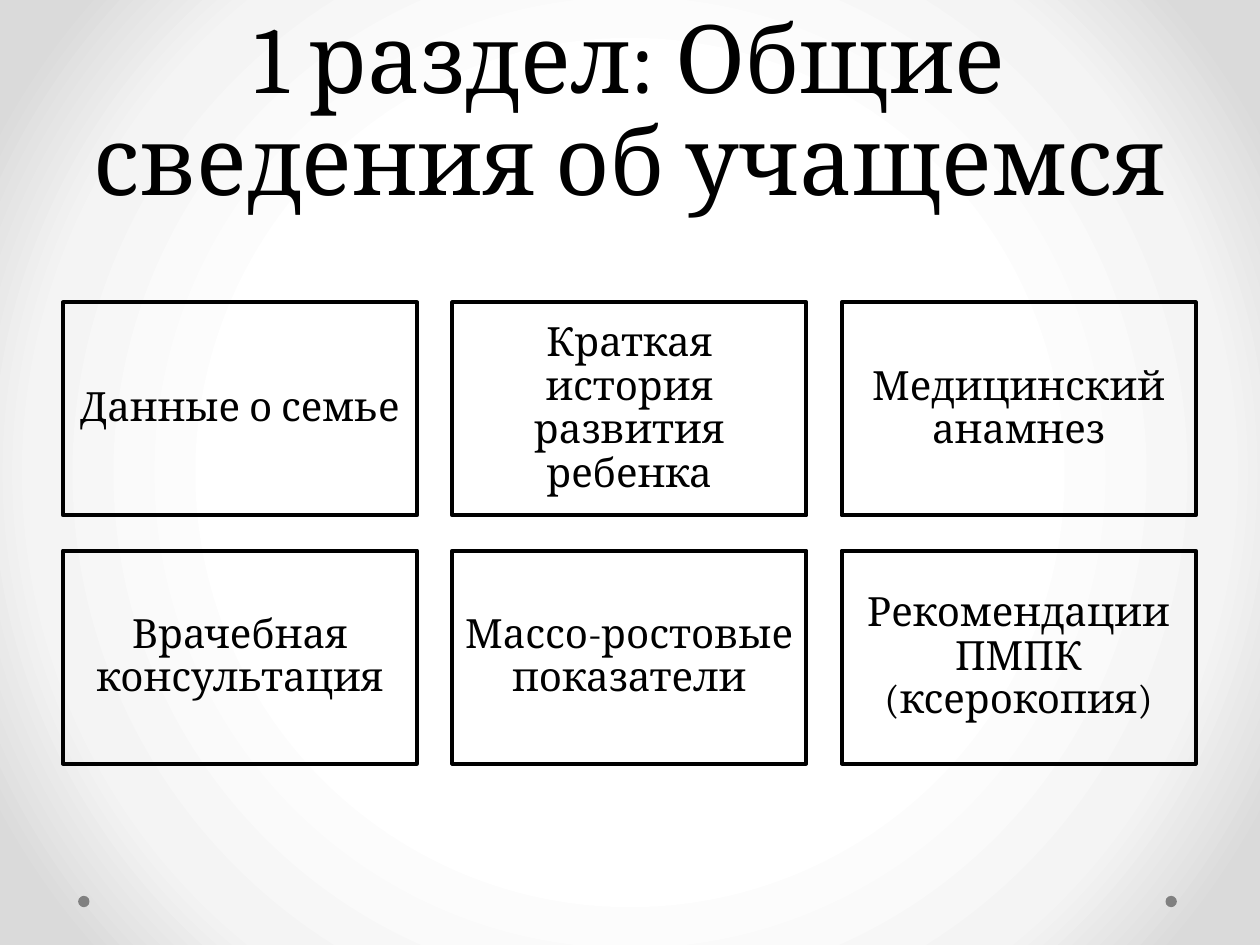
from pptx import Presentation
from pptx.dml.color import RGBColor
from pptx.enum.shapes import MSO_SHAPE
from pptx.enum.text import MSO_ANCHOR, PP_ALIGN
from pptx.oxml import parse_xml
from pptx.oxml.ns import nsdecls
from pptx.util import Inches, Pt

RECTANGLE = MSO_SHAPE.RECTANGLE
OVAL = MSO_SHAPE.OVAL
CENTER = PP_ALIGN.CENTER
MIDDLE = MSO_ANCHOR.MIDDLE
BOTTOM = MSO_ANCHOR.BOTTOM

BLACK = RGBColor(0x00, 0x00, 0x00)
GRAY = RGBColor(0x80, 0x80, 0x80)
FONT = "Cambria"

BACKGROUND_STOPS = [(50, "FFFFFF"), (76, "F4F4F4"), (92, "DADADA")]
TITLE = "1 раздел: Общие сведения об учащемся"
TOPICS = [
    "Данные о семье",
    "Краткая история развития ребенка",
    "Медицинский анамнез",
    "Врачебная консультация",
    "Массо-ростовые показатели",
    "Рекомендации ПМПК (ксерокопия)",
]
COLUMNS = 3
BOX_WIDTH, BOX_HEIGHT = 2.81, 1.69
GRID_LEFT, GRID_TOP = 0.5, 2.4
GAP = 0.28


def set_background(slide):
    stops = "".join(
        f'<a:gs pos="{position * 1000}"><a:srgbClr val="{color}"/></a:gs>'
        for position, color in BACKGROUND_STOPS
    )
    background = parse_xml(
        f'<p:bg {nsdecls("p", "a")}><p:bgPr><a:gradFill rotWithShape="1">'
        f'<a:gsLst>{stops}</a:gsLst><a:path path="circle">'
        '<a:fillToRect l="50000" t="50000" r="50000" b="50000"/></a:path>'
        "</a:gradFill><a:effectLst/></p:bgPr></p:bg>"
    )
    slide.element.cSld.insert(0, background)


def write_text(shape, text, size, spacing, anchor):
    text_frame = shape.text_frame
    text_frame.text = text
    text_frame.word_wrap = True
    text_frame.vertical_anchor = anchor
    paragraph = text_frame.paragraphs[0]
    paragraph.alignment = CENTER
    paragraph.line_spacing = spacing
    font = paragraph.runs[0].font
    font.name = FONT
    font.size = Pt(size)
    font.color.rgb = BLACK


def add_title(slide):
    title = slide.shapes.add_textbox(Inches(0.5), 0, Inches(9), Inches(1.75))
    write_text(title, TITLE, 54, Pt(58), BOTTOM)


def add_dot(slide, left):
    dot = slide.shapes.add_shape(
        OVAL, Inches(left), Inches(7.11), Inches(0.09), Inches(0.09)
    )
    dot.shadow.inherit = False
    dot.fill.solid()
    dot.fill.fore_color.rgb = GRAY
    dot.line.fill.background()


def add_topic_box(slide, left, top, text):
    box = slide.shapes.add_shape(
        RECTANGLE, Inches(left), Inches(top), Inches(BOX_WIDTH), Inches(BOX_HEIGHT)
    )
    box.shadow.inherit = False
    box.fill.background()
    box.line.color.rgb = BLACK
    box.line.width = Pt(2.25)
    text_frame = box.text_frame
    text_frame.margin_left = text_frame.margin_right = Inches(0.1)
    text_frame.margin_top = text_frame.margin_bottom = Inches(0.1)
    write_text(box, text, 23, 0.9, MIDDLE)


def main():
    presentation = Presentation()
    presentation.slide_width = Inches(10)
    presentation.slide_height = Inches(7.5)
    slide = presentation.slides.add_slide(presentation.slide_layouts[6])
    set_background(slide)
    for left in (9.25, 0.62):
        add_dot(slide, left)
    add_title(slide)
    for index, topic in enumerate(TOPICS):
        row, column = divmod(index, COLUMNS)
        left = GRID_LEFT + column * (BOX_WIDTH + GAP)
        top = GRID_TOP + row * (BOX_HEIGHT + GAP)
        add_topic_box(slide, left, top, topic)
    presentation.save("out.pptx")


if __name__ == "__main__":
    main()
